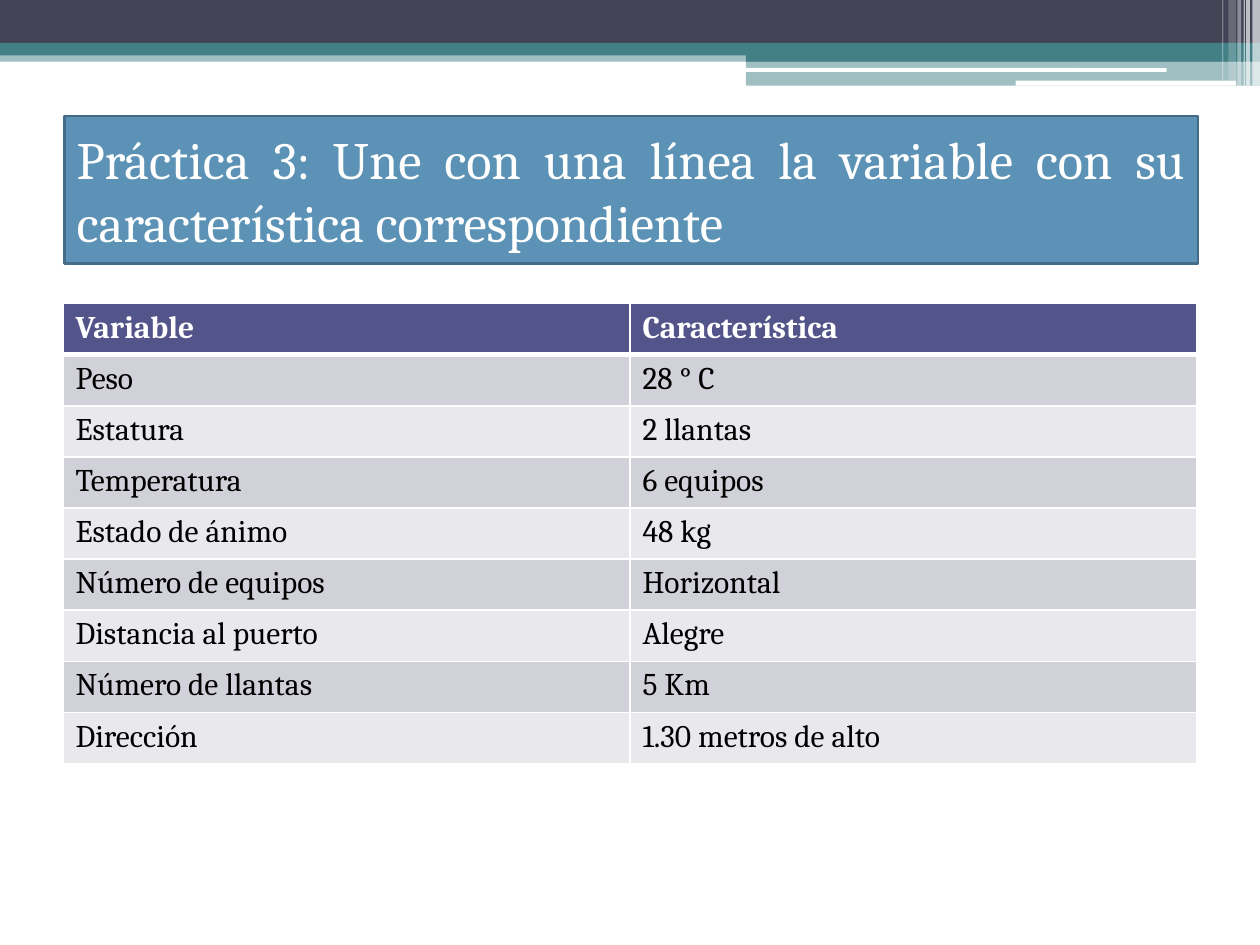
from lxml import etree
from pptx import Presentation
from pptx import util as u
from pptx.dml.color import RGBColor
from pptx.enum import shapes, text
from pptx.oxml import ns

FONT = "Cambria"
WHITE, TEAL, SLATE = "FFFFFF", "438086", "424456"
RECT = shapes.MSO_SHAPE.RECTANGLE
ROUND = shapes.MSO_SHAPE.ROUNDED_RECTANGLE

# left, top, width, height, colour, opacity in percent
BANDS = [
    (0, 0.4, 10, 0.09, TEAL, 50),
    (0, 0, 10, 0.34, SLATE, 100),
    (0, 0.34, 10, 0.1, TEAL, 100),
    (5.92, 0.39, 4.08, 0.1, TEAL, 100),
    (5.92, 0.48, 4.08, 0.2, TEAL, 50),
]
LINES = [(5.91, 0.54, 3.35, 0.03), (8.06, 0.64, 1.75, 0.04)]
# left, width, height, opacity in percent
STRIPES = [
    (9.94, 0.06, 0.68, 65),
    (9.89, 0.03, 0.68, 65),
    (9.87, 0.01, 0.68, 60),
    (9.82, 0.03, 0.68, 40),
    (9.75, 0.06, 0.64, 20),
    (9.7, 0.01, 0.64, 30),
]
ROWS = [
    ("Variable", "Característica"),
    ("Peso", "28 ° C"),
    ("Estatura", "2 llantas"),
    ("Temperatura", "6 equipos"),
    ("Estado de ánimo", "48 kg"),
    ("Número de equipos", "Horizontal"),
    ("Distancia al puerto", "Alegre"),
    ("Número de llantas", "5 Km"),
    ("Dirección", "1.30 metros de alto"),
]


def color(code):
    return RGBColor.from_string(code)


def sub(parent, tag, **attrs):
    return etree.SubElement(parent, ns.qn(tag), **attrs)


class Deck:
    def __init__(self, slide, font):
        self.slide = slide
        self.font = font

    def style(self, para, size, code, bold=False):
        font = para.font
        font.name, font.size, font.bold = self.font, u.Pt(size), bold
        font.color.rgb = color(code)

    def box(self, kind, left, top, width, height, code, alpha=100):
        shape = self.slide.shapes.add_shape(
            kind, *map(u.Inches, (left, top, width, height)))
        shape.shadow.inherit = False
        shape.fill.solid()
        shape.fill.fore_color.rgb = color(code)
        shape.line.fill.background()
        if alpha < 100:
            tint = shape._element.spPr.find(".//" + ns.qn("a:srgbClr"))
            sub(tint, "a:alpha", val=str(alpha * 1000))
        return shape

    def title(self, words, *place):
        shape = self.box(RECT, *place, "5C92B5")
        shape.line.color.rgb = color("446C86")
        shape.line.width = u.Pt(1.5)
        frame = shape.text_frame
        frame.word_wrap = True
        frame.vertical_anchor = text.MSO_ANCHOR.MIDDLE
        para = frame.paragraphs[0]
        para.text = words
        para.alignment = text.PP_ALIGN.JUSTIFY
        self.style(para, 30, WHITE)

    def edges(self, cell, top, bottom):
        """Draw white borders; top and bottom are widths in points."""
        props = cell._tc.get_or_add_tcPr()
        for side, width in zip("LRTB", (1, 1, top, bottom)):
            line = sub(props, "a:ln" + side, w=str(u.Pt(width)))
            sub(sub(line, "a:solidFill"), "a:srgbClr", val=WHITE)

    def table(self, rows, left, top, width, height):
        grid = self.slide.shapes.add_table(
            len(rows), len(rows[0]),
            *map(u.Inches, (left, top, width, height))).table
        for r, row in enumerate(rows):
            head = r == 0
            fill = "53548A" if head else ("E9E9ED", "D1D1DA")[r % 2]
            for c, words in enumerate(row):
                cell = grid.cell(r, c)
                self.edges(cell, 3 if r == 1 else 1, 3 if head else 1)
                cell.fill.solid()
                cell.fill.fore_color.rgb = color(fill)
                para = cell.text_frame.paragraphs[0]
                para.text = words
                self.style(para, 18, WHITE if head else "000000", head)


def main():
    prs = Presentation()
    prs.slide_width, prs.slide_height = u.Inches(10), u.Inches(7.5)
    deck = Deck(prs.slides.add_slide(prs.slide_layouts[6]), FONT)
    for band in BANDS:
        deck.box(RECT, *band)
    for line in LINES:
        deck.box(ROUND, *line, WHITE)
    for left, width, height, alpha in STRIPES:
        deck.box(RECT, left, 0, width, height, WHITE, alpha)
    deck.title("Práctica 3: Une con una línea la variable con su "
               "característica correspondiente", 0.51, 0.92, 9, 1.17)
    deck.table(ROWS, 0.5, 2.41, 9, 3.65)
    prs.save("out.pptx")


if __name__ == "__main__":
    main()
